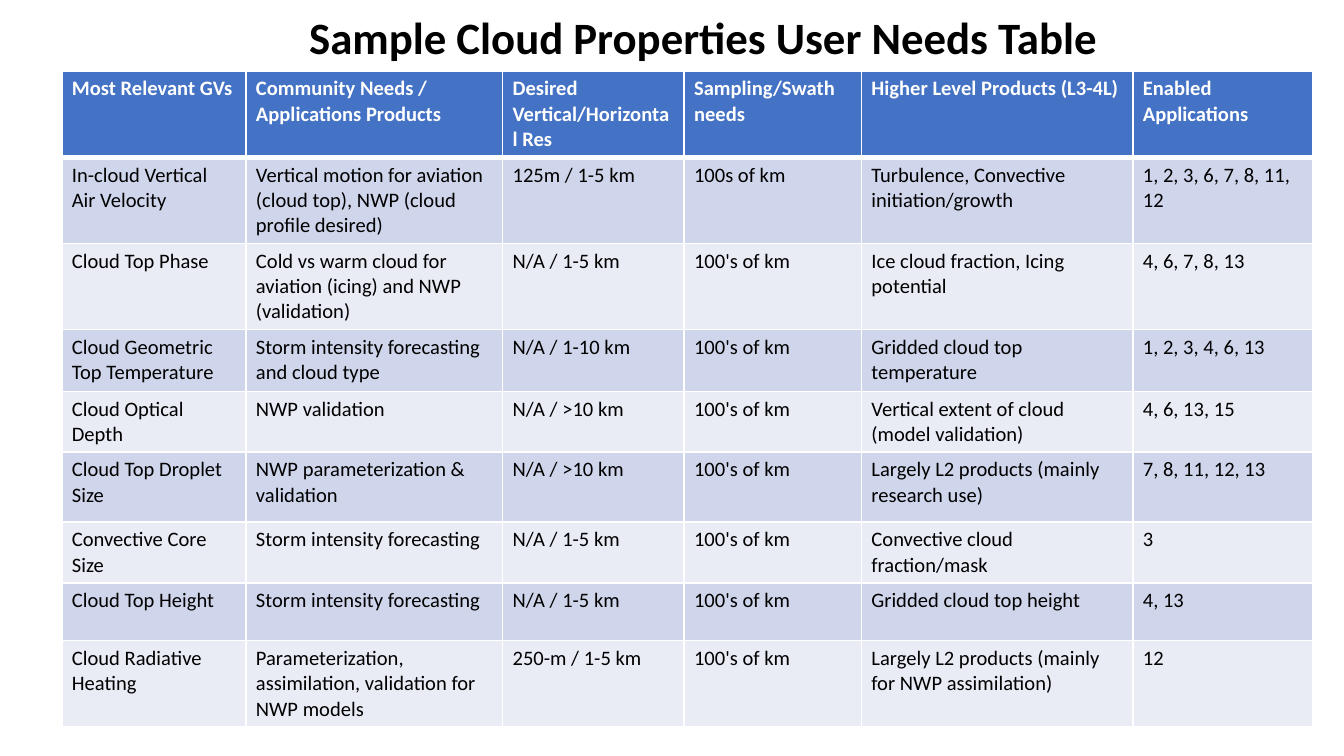
"""Build a slide with a table of cloud property user needs."""
from lxml.etree import SubElement
from pptx import Presentation
from pptx.dml.color import RGBColor
from pptx.enum.text import MSO_ANCHOR, PP_ALIGN
from pptx.oxml.ns import qn
from pptx.util import Inches, Pt

TITLE = "Sample Cloud Properties User Needs Table"
HEAD = ("Most Relevant GVs", "Community Needs / Applications Products",
        "Desired Vertical/Horizontal Res", "Sampling/Swath needs",
        "Higher Level Products (L3-4L)", "Enabled Applications")
NEEDS = [
    ("In-cloud Vertical Air Velocity",
     "Vertical motion for aviation (cloud top), NWP (cloud profile desired)",
     "125m / 1-5 km", "100s of km",
     "Turbulence, Convective initiation/growth", "1, 2, 3, 6, 7, 8, 11, 12"),
    ("Cloud Top Phase",
     "Cold vs warm cloud for aviation (icing) and NWP (validation)",
     "N/A / 1-5 km", "100's of km",
     "Ice cloud fraction, Icing potential", "4, 6, 7, 8, 13"),
    ("Cloud Geometric Top Temperature",
     "Storm intensity forecasting and cloud type",
     "N/A / 1-10 km", "100's of km",
     "Gridded cloud top temperature", "1, 2, 3, 4, 6, 13"),
    ("Cloud Optical Depth", "NWP validation",
     "N/A / >10 km", "100's of km",
     "Vertical extent of cloud (model validation)", "4, 6, 13, 15"),
    ("Cloud Top Droplet Size", "NWP parameterization & validation",
     "N/A / >10 km", "100's of km",
     "Largely L2 products (mainly research use)", "7, 8, 11, 12, 13"),
    ("Convective Core Size", "Storm intensity forecasting",
     "N/A / 1-5 km", "100's of km",
     "Convective cloud fraction/mask", "3"),
    ("Cloud Top Height", "Storm intensity forecasting",
     "N/A / 1-5 km", "100's of km",
     "Gridded cloud top height", "4, 13"),
    ("Cloud Radiative Heating",
     "Parameterization, assimilation, validation for NWP models",
     "250-m / 1-5 km", "100's of km",
     "Largely L2 products (mainly for NWP assimilation)", "12"),
]
WIDTHS = (1.37, 1.91, 1.35, 1.32, 2.02, 1.34)
HEIGHTS = (0.29, 0.5, 0.58, 0.46, 0.27, 0.52, 0.29, 0.43, 0)
PAD = Inches(0.15) // 2
COLORS = {"head": "4472C4", "odd": "CFD5EA", "even": "E9EBF5",
          "white": "FFFFFF", "black": "000000"}


def style(para, size, color, bold):
    """Format one paragraph."""
    font = para.font
    font.name, font.size, font.bold = "Calibri", Pt(size), bold
    font.color.rgb = RGBColor.from_string(COLORS[color])


def add_title(slide):
    """Place and format the title."""
    title = slide.shapes.title
    title.left, title.top = Inches(2.2), Inches(-0.25)
    title.width, title.height = Inches(6.62), Inches(1.09)
    frame = title.text_frame
    frame.text = TITLE
    frame.vertical_anchor = MSO_ANCHOR.MIDDLE
    para = frame.paragraphs[0]
    para.alignment, para.line_spacing = PP_ALIGN.LEFT, 0.9
    style(para, 24, "black", True)


def add_edges(cell, row):
    """Draw the white borders of one cell."""
    props = cell._tc.get_or_add_tcPr()
    for side in "LRTB":
        thick = (row == 0 and side == "B") or (row == 1 and side == "T")
        line = SubElement(props, qn("a:ln" + side), w=str(Pt(3 if thick else 1)))
        fill = SubElement(line, qn("a:solidFill"))
        SubElement(fill, qn("a:srgbClr"), val=COLORS["white"])


def fill_cell(cell, text, row):
    """Write and format one cell."""
    cell.text = text
    cell.margin_left = cell.margin_right = PAD
    cell.margin_top = cell.margin_bottom = PAD // 2
    add_edges(cell, row)
    shade = "head" if row == 0 else "odd" if row % 2 else "even"
    cell.fill.solid()
    cell.fill.fore_color.rgb = RGBColor.from_string(COLORS[shade])
    style(cell.text_frame.paragraphs[0], 11,
          "black" if row else "white", row == 0)


def add_needs(slide):
    """Add the table of needs."""
    rows = [HEAD] + NEEDS
    frame = slide.shapes.add_table(
        len(rows), len(HEAD), Inches(0.46), Inches(0.53),
        Inches(9.32), Inches(4.79))
    table = frame.table
    for col, width in zip(table.columns, WIDTHS):
        col.width = Inches(width)
    for row, height in zip(table.rows, HEIGHTS):
        row.height = Inches(height)
    frame.height = Inches(4.79)
    for r, texts in enumerate(rows):
        for c, text in enumerate(texts):
            fill_cell(table.cell(r, c), text, r)


def main():
    """Build and save the slide."""
    deck = Presentation()
    deck.slide_width = Inches(10)
    deck.slide_height = deck.slide_width * 9 // 16
    slide = deck.slides.add_slide(deck.slide_layouts[5])
    add_title(slide)
    add_needs(slide)
    deck.save("out.pptx")


if __name__ == "__main__":
    main()
